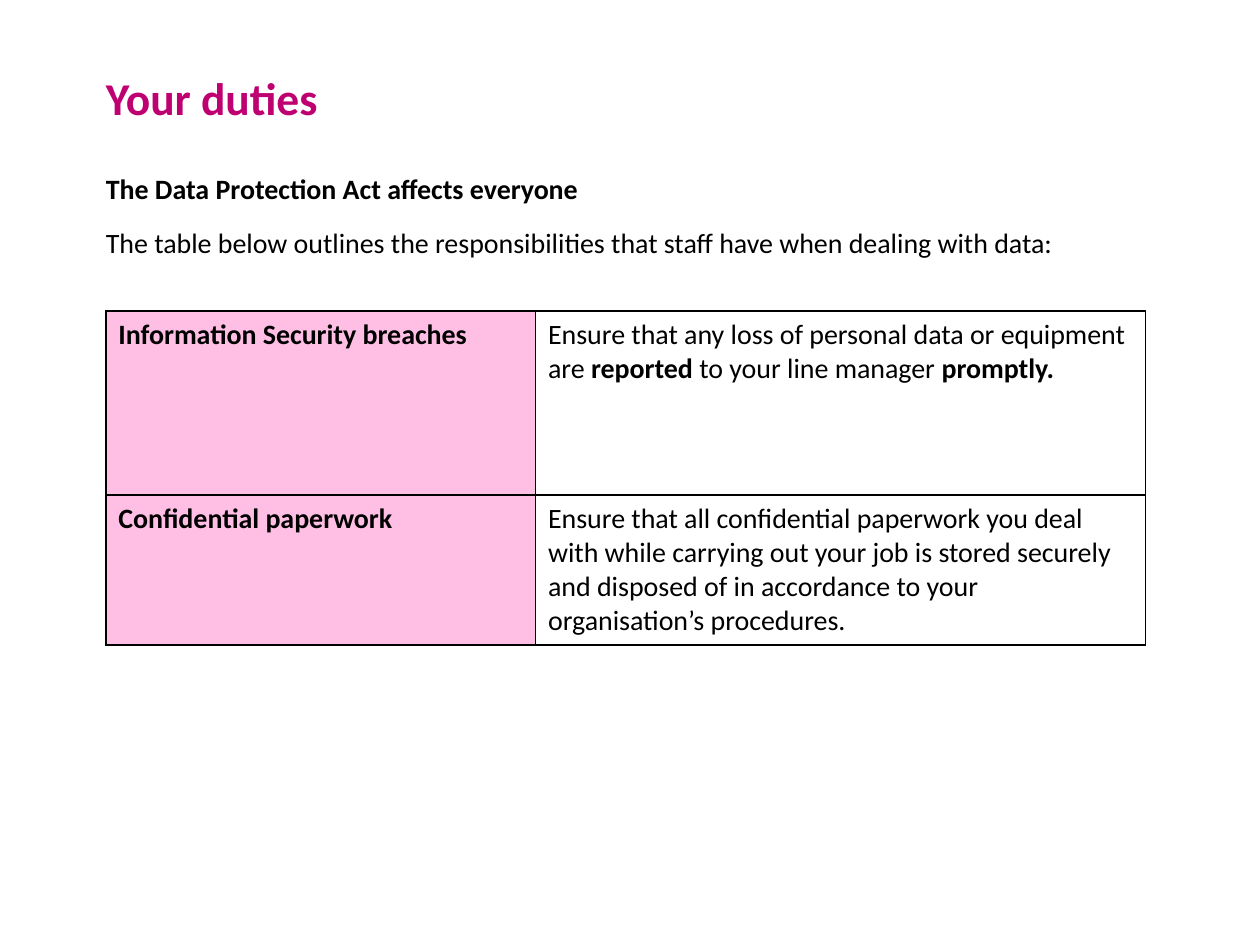
from pptx import Presentation
from pptx.dml.color import RGBColor
from pptx.oxml import parse_xml
from pptx.oxml.ns import nsdecls
from pptx.util import Inches, Pt

FONT = "Calibri"
BLACK = "000000"
PINK = "FFBFE5"
MAGENTA = "BE0071"

DUTIES = [
    ("Information Security breaches",
     [("Ensure that any loss of personal data or equipment are ", False),
      ("reported", True),
      (" to your line manager ", False),
      ("promptly.", True)]),
    ("Confidential paperwork",
     [("Ensure that all confidential paperwork you deal with while carrying out "
       "your job is stored securely and disposed of in accordance to your "
       "organisation’s procedures.", False)]),
]


def color(value):
    return RGBColor.from_string(value)


def add_runs(p, parts, size=16, fill=BLACK):
    for text, bold in parts:
        r = p.add_run()
        r.text = text
        r.font.name = FONT
        r.font.size = Pt(size)
        r.font.bold = bold
        r.font.color.rgb = color(fill)


def add_text_frame(s, box):
    tf = s.shapes.add_textbox(*map(Inches, box)).text_frame
    tf.word_wrap = True
    tf.margin_left = tf.margin_right = tf.margin_top = tf.margin_bottom = 0
    return tf


def add_title(s, box):
    tf = add_text_frame(s, box)
    add_runs(tf.paragraphs[0], [("Your duties", True)], 26, MAGENTA)


def add_intro(s, box):
    tf = add_text_frame(s, box)
    lead = tf.paragraphs[0]
    add_runs(lead, [("The Data Protection Act affects everyone", True)])
    detail = tf.add_paragraph()
    detail.space_before = Pt(8)
    add_runs(detail, [("The table below outlines the responsibilities that staff "
                       "have when dealing with data:", False)])
    for p in (lead, detail):
        p.line_spacing = 1.2


def set_borders(cell):
    tcPr = cell._tc.get_or_add_tcPr()
    for i, side in enumerate(("lnL", "lnR", "lnT", "lnB")):
        tcPr.insert(i, parse_xml(
            f'<a:{side} {nsdecls("a")} w="{Pt(1)}"><a:solidFill>'
            f'<a:srgbClr val="{BLACK}"/></a:solidFill></a:{side}>'))


def add_duties_table(s, box, widths, heights):
    table = s.shapes.add_table(len(heights), len(widths), *map(Inches, box)).table
    table.first_row = table.horz_banding = False
    for column, width in zip(table.columns, widths):
        column.width = Inches(width)
    for row, height, (topic, duty) in zip(table.rows, heights, DUTIES):
        row.height = Inches(height)
        topic_cell, duty_cell = row.cells
        topic_cell.fill.solid()
        topic_cell.fill.fore_color.rgb = color(PINK)
        duty_cell.fill.background()
        for cell, parts in ((topic_cell, [(topic, True)]), (duty_cell, duty)):
            add_runs(cell.text_frame.paragraphs[0], parts)
            set_borders(cell)


def main():
    prs = Presentation()
    prs.slide_width, prs.slide_height = Inches(10), Inches(7.5)
    s = prs.slides.add_slide(prs.slide_layouts[6])
    left = 0.84
    add_title(s, (left, 0.56, 5.34, 0.4))
    add_intro(s, (left, 1.31, 8.38, 4.76))
    add_duties_table(s, (left, 2.47, 8.25, 2.65), (3.41, 4.84), (1.46, 1.19))
    prs.save("out.pptx")


if __name__ == "__main__":
    main()
